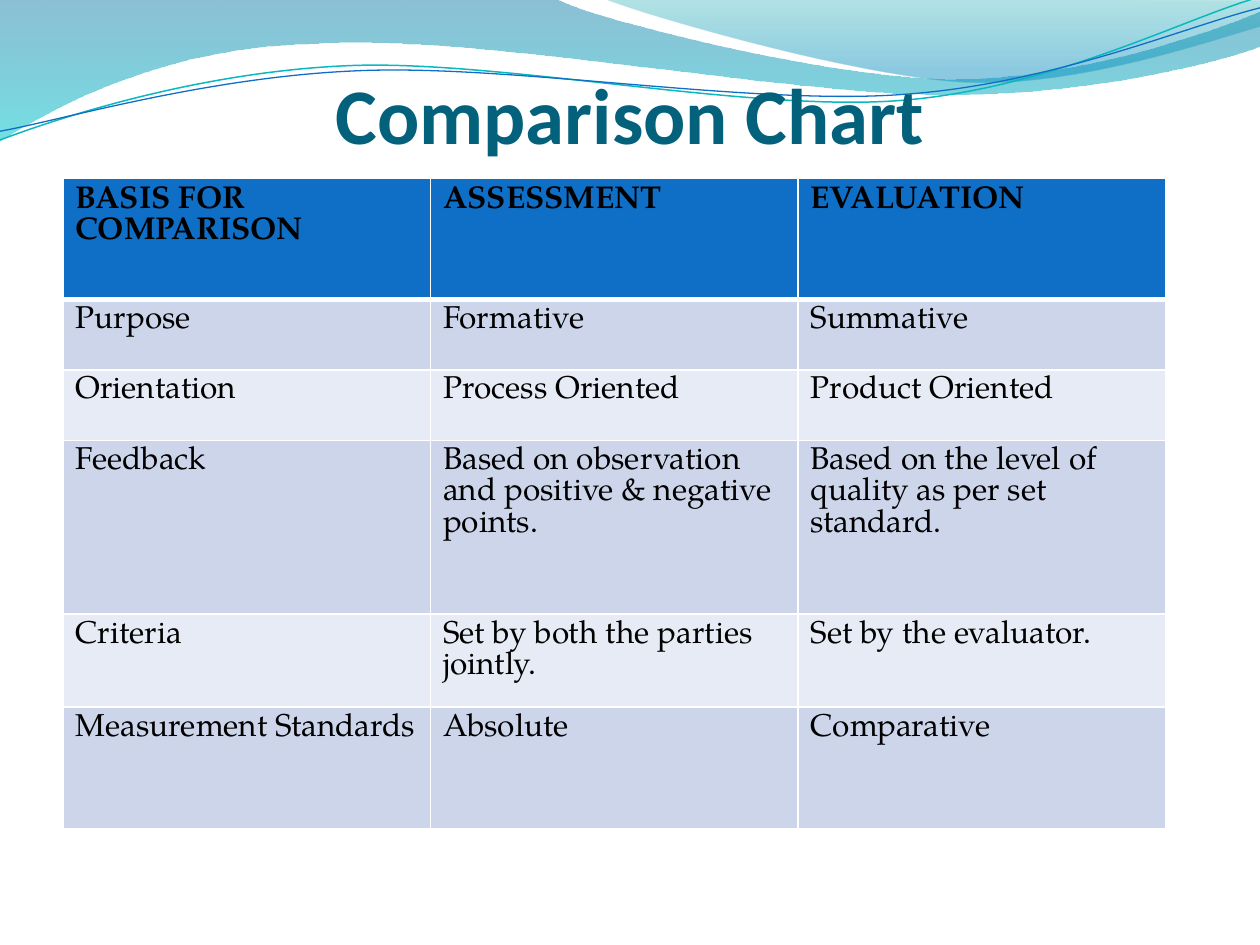
from math import cos, radians, sin

from lxml.etree import SubElement
from pptx import Presentation
from pptx.dml.color import RGBColor
from pptx.enum.text import MSO_ANCHOR, PP_ALIGN
from pptx.oxml.ns import qn
from pptx.util import Pt

TILT = -2.7
HEADER, BANDS = "0F6FC6", ("CCD5EA", "E7EBF5")
COLUMN = 210
HEIGHTS = (69.25, 40.25, 40.25, 99.25, 53.25, 69.5)
ROWS = (
    ("BASIS FOR COMPARISON", "ASSESSMENT", "EVALUATION"),
    ("Purpose", "Formative", "Summative"),
    ("Orientation", "Process Oriented", "Product Oriented"),
    ("Feedback", "Based on observation and positive & negative points.",
     "Based on the level of quality as per set standard."),
    ("Criteria", "Set by both the parties jointly.", "Set by the evaluator."),
    ("Measurement Standards", "Absolute", "Comparative"),
)

# Each step is one point (straight) or three points (Bezier curve)
BACK = [
    [(0, 0)], [(317, -1)],
    [(343, 12), (478, 45), (546, 45)], [(614, 45), (690, 19), (720, 6.5)],
    [(721, 26)],
    [(708, 32), (626, 55), (537, 54)], [(448, 54), (275, 20), (185, 24.5)],
    [(93, 26), (33, 60), (-1, 81)], [(0, 0)],
]
FRONT = [
    [(345, -1)],
    [(366.5, 8), (491, 44.5), (553.5, 47)], [(616, 49.5), (692, 23), (720, 15)],
    [(720, 0)], [(345, -1)],
]
TEAL = [
    [(0, 80)],
    [(34.5, 67), (114, 41), (199.5, 37.5)],
    [(284.5, 34), (427, 64), (513.5, 57.5)],
    [(600, 51), (675.5, 11), (719, -1.5)],
]
BLUE = [
    [(0, 75)],
    [(34, 69), (118, 44), (204, 40.5)], [(290, 36.5), (430, 60.5), (516, 54)],
    [(602, 48), (677.5, 15), (720, 4.5)],
]


def color(code):
    return RGBColor.from_string(code)


def turn(steps, center, angle):
    a, (cx, cy) = radians(angle), center
    return [[(cx + (x - cx) * cos(a) - (y - cy) * sin(a),
              cy + (x - cx) * sin(a) + (y - cy) * cos(a)) for x, y in step]
            for step in steps]


def draw(slide, steps, close):
    first, *rest = [(Pt(x), Pt(y)) for step in steps for x, y in step]
    builder = slide.shapes.build_freeform(*first)
    builder.add_line_segments(rest, close=close)
    shape = builder.convert_to_shape()
    shape.shadow.inherit = False
    # Join each run of three points into one curve
    lines = iter(list(shape._element.iter(qn("a:lnTo"))))
    for step in steps[1:]:
        head = next(lines)
        if len(step) == 3:
            head.tag = qn("a:cubicBezTo")
            for line in (next(lines), next(lines)):
                head.append(line[0])
                line.getparent().remove(line)
    return shape


def add_wave(slide, steps, stops):
    shape = draw(slide, steps, True)
    shape.line.fill.background()
    shape.fill.gradient()
    shape.fill.gradient_angle = 270
    for stop, (place, code, alpha) in zip(shape.fill.gradient_stops, stops):
        stop.position = place
        stop.color.rgb = color(code)
    tones = shape._element.spPr.iter(qn("a:srgbClr"))
    for tone, (_, _, alpha) in zip(tones, stops):
        SubElement(tone, qn("a:alpha"), val=str(alpha * 1000))


def add_curve(slide, steps, center, code, width):
    shape = draw(slide, turn(steps, center, -TILT), False)
    shape.rotation = TILT
    shape.fill.background()
    shape.line.color.rgb = color(code)
    shape.line.width = Pt(width)


def style(para, font, size, code, bold):
    for run in para.runs:
        run.font.name, run.font.size, run.font.bold = font, Pt(size), bold
        run.font.color.rgb = color(code)


def add_title(slide, text):
    frame = slide.shapes.add_textbox(Pt(36), Pt(55.5), Pt(648), Pt(90)).text_frame
    frame.word_wrap = True
    frame.vertical_anchor = MSO_ANCHOR.BOTTOM
    frame.margin_left = frame.margin_right = 0
    frame.margin_bottom = Pt(54)
    frame.text = text
    para = frame.paragraphs[0]
    para.alignment = PP_ALIGN.CENTER
    style(para, "Calibri", 45, "04617B", True)


def add_border(cell, side, width):
    line = SubElement(cell._tc.get_or_add_tcPr(), qn("a:" + side), w=str(Pt(width)))
    fill = SubElement(line, qn("a:solidFill"))
    SubElement(fill, qn("a:srgbClr"), val="FFFFFF")


def fill_cell(cell, text, row):
    cell.text = text
    para = cell.text_frame.paragraphs[0]
    para.line_spacing = Pt(18)
    style(para, "TeX Gyre Pagella", 18, "000000", row == 0)
    # Borders come before the fill; the header has a thick lower edge
    for side, width in (("lnL", 1), ("lnR", 1), ("lnT", 3 if row == 1 else 1),
                        ("lnB", 3 if row == 0 else 1)):
        add_border(cell, side, width)
    cell.fill.solid()
    cell.fill.fore_color.rgb = color(BANDS[(row - 1) % 2] if row else HEADER)


def add_grid(slide):
    count = len(ROWS[0])
    table = slide.shapes.add_table(len(ROWS), count, Pt(36), Pt(102),
                                   Pt(COLUMN * count), Pt(sum(HEIGHTS))).table
    for column in table.columns:
        column.width = Pt(COLUMN)
    for r, (texts, height) in enumerate(zip(ROWS, HEIGHTS)):
        table.rows[r].height = Pt(height)
        for c, text in enumerate(texts):
            fill_cell(table.cell(r, c), text, r)


def main():
    deck = Presentation()
    deck.slide_width, deck.slide_height = Pt(720), Pt(540)
    slide = deck.slides.add_slide(deck.slide_layouts[6])

    # Waves along the top
    add_wave(slide, BACK, ((0, "0074A1", 45), (1, "00C6CF", 55)))
    add_wave(slide, FRONT, ((0, "00A1A9", 30), (0.8, "008BBF", 45)))
    add_curve(slide, TEAL, (359.5, 41.5), "0AB8BF", 0.85)
    add_curve(slide, BLUE, (360, 42.5), "0F6FC6", 0.75)

    # Title and table
    add_title(slide, "Comparison Chart")
    add_grid(slide)
    deck.save("out.pptx")


if __name__ == "__main__":
    main()
